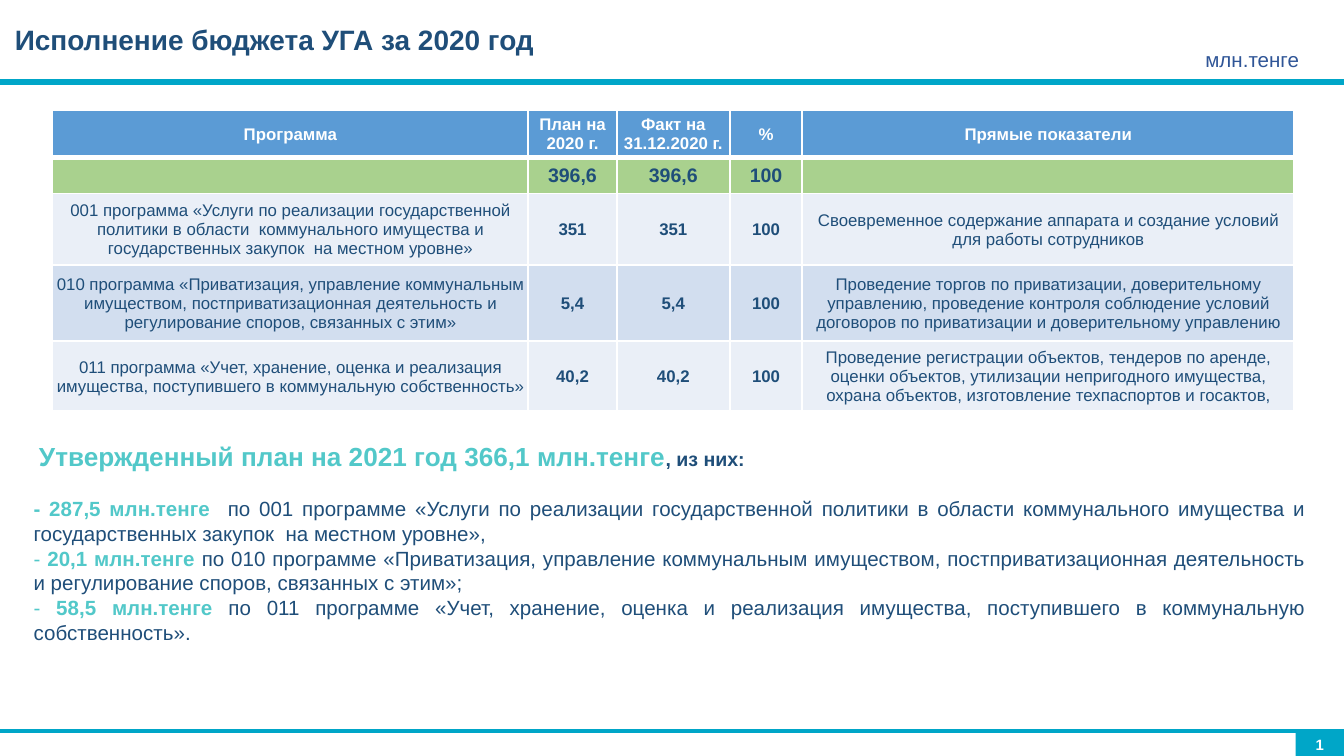
from typing import Any, NamedTuple

from lxml.etree import SubElement
from pptx import Presentation
from pptx.dml.color import RGBColor
from pptx.enum.shapes import MSO_CONNECTOR as Connector, MSO_SHAPE as Shape
from pptx.enum.text import MSO_ANCHOR as Anchor, MSO_AUTO_SIZE as AutoSize, PP_ALIGN as Align
from pptx.oxml.ns import qn
from pptx.util import Inches, Pt

COLORS = {
    "white": "FFFFFF", "teal": "00A6C8", "navy": "1F4E79", "blue": "2F5597",
    "aqua": "52C8C9", "header": "5B9BD5", "total": "A9D18E",
    "light": "EAEFF7", "medium": "D2DEEF",
}


class Rule(NamedTuple):
    y: float
    weight: float


class Run(NamedTuple):
    text: str
    size: float
    color: str
    bold: bool = False


class BudgetRow(NamedTuple):
    height: float
    fill: str
    cells: tuple[str, ...]
    color: str = "navy"
    size: float = 9
    bold_columns: tuple[int, ...] = (1, 2, 3)


RULES = [Rule(0.61, 3), Rule(5.44, 2)]
COLUMN_WIDTHS = [3.54, 0.66, 0.84, 0.54, 3.66]
BUDGET = [
    BudgetRow(0.35, "header",
              ("Программа", "План на 2020 г.", "Факт на 31.12.2020 г.", "%", "Прямые показатели"),
              color="white", bold_columns=(0, 1, 2, 3, 4)),
    BudgetRow(0.27, "total", ("", "396,6", "396,6", "100", ""), size=10.5),
    BudgetRow(0.53, "light",
              ("001 программа «Услуги по реализации государственной политики в области  "
               "коммунального имущества и государственных закупок  на местном уровне»",
               "351", "351", "100",
               "Своевременное содержание аппарата и создание условий для работы сотрудников")),
    BudgetRow(0.57, "medium",
              ("010 программа «Приватизация, управление коммунальным имуществом, "
               "постприватизационная деятельность и регулирование споров, связанных с этим»",
               "5,4", "5,4", "100",
               "Проведение торгов по приватизации, доверительному управлению, проведение контроля "
               "соблюдение условий договоров по приватизации и доверительному управлению")),
    BudgetRow(0.52, "light",
              ("011 программа «Учет, хранение, оценка и реализация имущества, "
               "поступившего в коммунальную собственность»",
               "40,2", "40,2", "100",
               "Проведение регистрации объектов, тендеров по аренде, оценки объектов, утилизации "
               "непригодного имущества, охрана объектов, изготовление техпаспортов и госактов,")),
]
PLAN_HEADING = [Run("Утвержденный план на 2021 год 366,1 млн.тенге", 14, "aqua", True),
                Run(", из них:", 10.5, "navy", True)]
PLAN_ITEMS = [
    [Run("- 287,5 млн.тенге  ", 11, "aqua", True),
     Run("по 001 программе «Услуги по реализации государственной политики в области "
         "коммунального имущества и государственных закупок  на местном уровне»,", 11, "navy")],
    [Run("- ", 11, "aqua"), Run("20,1 млн.тенге ", 11, "aqua", True),
     Run("по 010 программе «Приватизация, управление коммунальным имуществом, "
         "постприватизационная деятельность и регулирование споров, связанных с этим»;",
         11, "navy")],
    [Run("- ", 11, "aqua"), Run("58,5 млн.тенге ", 11, "aqua", True),
     Run("по 011 программе «Учет, хранение, оценка и реализация имущества, "
         "поступившего в коммунальную собственность».", 11, "navy")],
]
FRAME_FORMAT = {
    "word_wrap": True, "auto_size": AutoSize.NONE, "vertical_anchor": Anchor.TOP,
    "margin_left": Inches(0.05), "margin_right": Inches(0.05),
    "margin_top": Inches(0.03), "margin_bottom": Inches(0.03),
}
CELL_FORMAT = {
    "vertical_anchor": Anchor.MIDDLE, "margin_left": Inches(0.01),
    "margin_right": Inches(0.01), "margin_top": Inches(0.01), "margin_bottom": 0,
}


def rgb(name: str) -> RGBColor:
    return RGBColor.from_string(COLORS[name])


def apply_format(target: Any, values: dict[str, Any]) -> None:
    for attribute, value in values.items():
        setattr(target, attribute, value)


def place(shape: Any, left: float, top: float, width: float, height: float) -> None:
    apply_format(shape, {"left": Inches(left), "top": Inches(top),
                         "width": Inches(width), "height": Inches(height)})


def write(paragraph: Any, runs: list[Run], align: Align) -> None:
    paragraph.alignment = align
    for part in runs:
        run = paragraph.add_run()
        run.text = part.text
        apply_format(run.font, {"name": "Arial", "size": Pt(part.size), "bold": part.bold})
        run.font.color.rgb = rgb(part.color)


def draw_rule(slide: Any, rule: Rule) -> None:
    y = Inches(rule.y)
    line = slide.shapes.add_connector(Connector.STRAIGHT, 0, y, Inches(10), y)
    line.line.color.rgb = rgb("teal")
    line.line.width = Pt(rule.weight)
    SubElement(line._element.spPr, qn("a:effectLst"))


def draw_page_number(slide: Any) -> None:
    badge = slide.shapes.add_shape(Shape.RECTANGLE, Inches(9.64), Inches(5.45),
                                   Inches(0.36), Inches(0.18))
    badge.shadow.inherit = False
    badge.fill.solid()
    badge.fill.fore_color.rgb = rgb("teal")
    badge.line.fill.background()
    apply_format(badge.text_frame, FRAME_FORMAT | {"vertical_anchor": Anchor.MIDDLE})
    write(badge.text_frame.paragraphs[0], [Run("1", 8, "white", True)], Align.CENTER)


def add_borders(cell: Any, bottom_weight: float) -> None:
    weights = {"a:lnL": 1, "a:lnR": 1, "a:lnT": 1, "a:lnB": bottom_weight}
    properties = cell._tc.get_or_add_tcPr()
    for side, weight in weights.items():
        border = SubElement(properties, qn(side), w=str(Pt(weight)))
        fill = SubElement(border, qn("a:solidFill"))
        SubElement(fill, qn("a:srgbClr"), val=COLORS["white"])


def draw_budget_table(slide: Any) -> None:
    table = slide.shapes.add_table(
        len(BUDGET), len(COLUMN_WIDTHS), Inches(0.39), Inches(0.82),
        Inches(sum(COLUMN_WIDTHS)), Inches(sum(row.height for row in BUDGET))).table
    for column, width in zip(table.columns, COLUMN_WIDTHS):
        column.width = Inches(width)
    for r, row in enumerate(BUDGET):
        table.rows[r].height = Inches(row.height)
        for c, text in enumerate(row.cells):
            cell = table.cell(r, c)
            apply_format(cell, CELL_FORMAT)
            add_borders(cell, 3 if r == 0 else 1)
            cell.fill.solid()
            cell.fill.fore_color.rgb = rgb(row.fill)
            paragraph = cell.text_frame.paragraphs[0]
            if text:
                write(paragraph, [Run(text, row.size, row.color, c in row.bold_columns)],
                      Align.CENTER)
            else:
                SubElement(paragraph._p, qn("a:endParaRPr"), sz="900")


def write_plan(body: Any) -> None:
    place(body, 0.2, 3.25, 9.57, 1.79)
    frame = body.text_frame
    apply_format(frame, FRAME_FORMAT)
    for i, runs in enumerate([PLAN_HEADING, *PLAN_ITEMS]):
        paragraph = frame.add_paragraph() if i else frame.paragraphs[0]
        properties = paragraph._p.get_or_add_pPr()
        properties.set("marL", str(0 if i else Inches(0.04)))
        properties.set("indent", "0")
        SubElement(properties, qn("a:buNone"))
        apply_format(paragraph, {"line_spacing": 1.0, "space_after": Pt(0),
                                 "space_before": Pt(13 if i == 1 else 0)})
        write(paragraph, runs, Align.JUSTIFY)


def main() -> None:
    deck = Presentation()
    deck.slide_width, deck.slide_height = Inches(10), Inches(10 * 9 / 16)
    slide = deck.slides.add_slide(deck.slide_layouts[1])
    for rule in RULES:
        draw_rule(slide, rule)
    draw_page_number(slide)

    title = slide.shapes.title
    place(title, 0, 0.15, 6.79, 0.59)
    apply_format(title.text_frame,
                 FRAME_FORMAT | {"margin_left": Inches(0.11), "margin_top": Inches(0.02)})
    write(title.text_frame.paragraphs[0],
          [Run("Исполнение бюджета УГА за 2020 год", 15, "navy", True)], Align.LEFT)

    draw_budget_table(slide)
    write_plan(slide.placeholders[1])

    unit = slide.shapes.add_textbox(Inches(8.87), Inches(0.3), Inches(1), Inches(0.29))
    unit.text_frame.word_wrap = True
    write(unit.text_frame.paragraphs[0], [Run("млн.тенге", 11, "blue")], Align.LEFT)
    deck.save("out.pptx")


if __name__ == "__main__":
    main()
